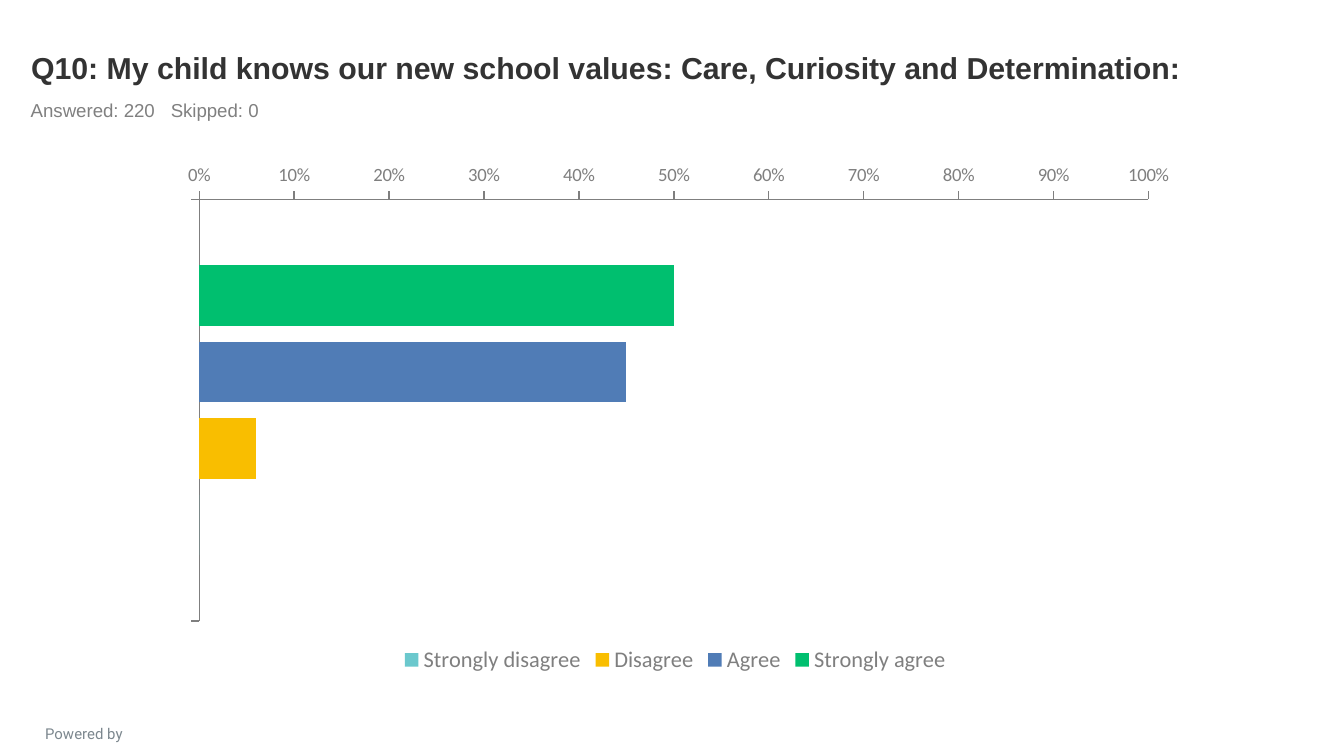
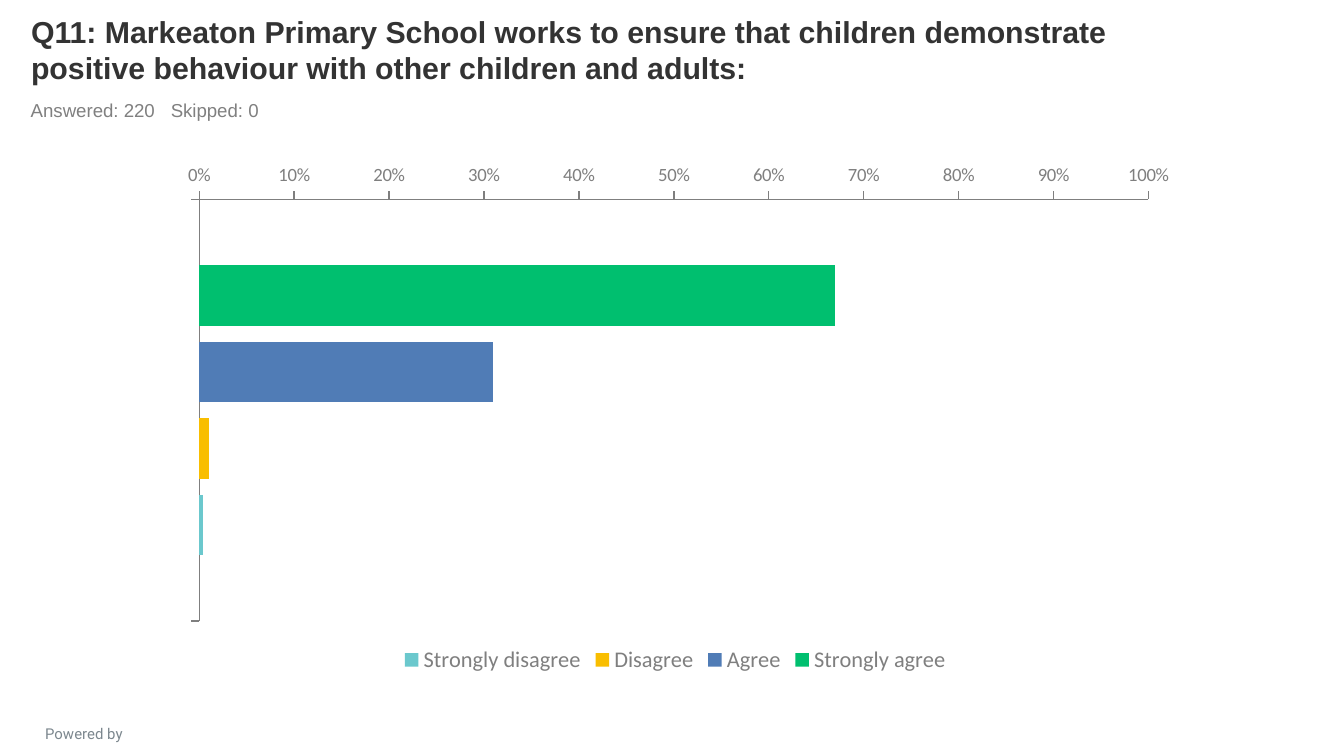
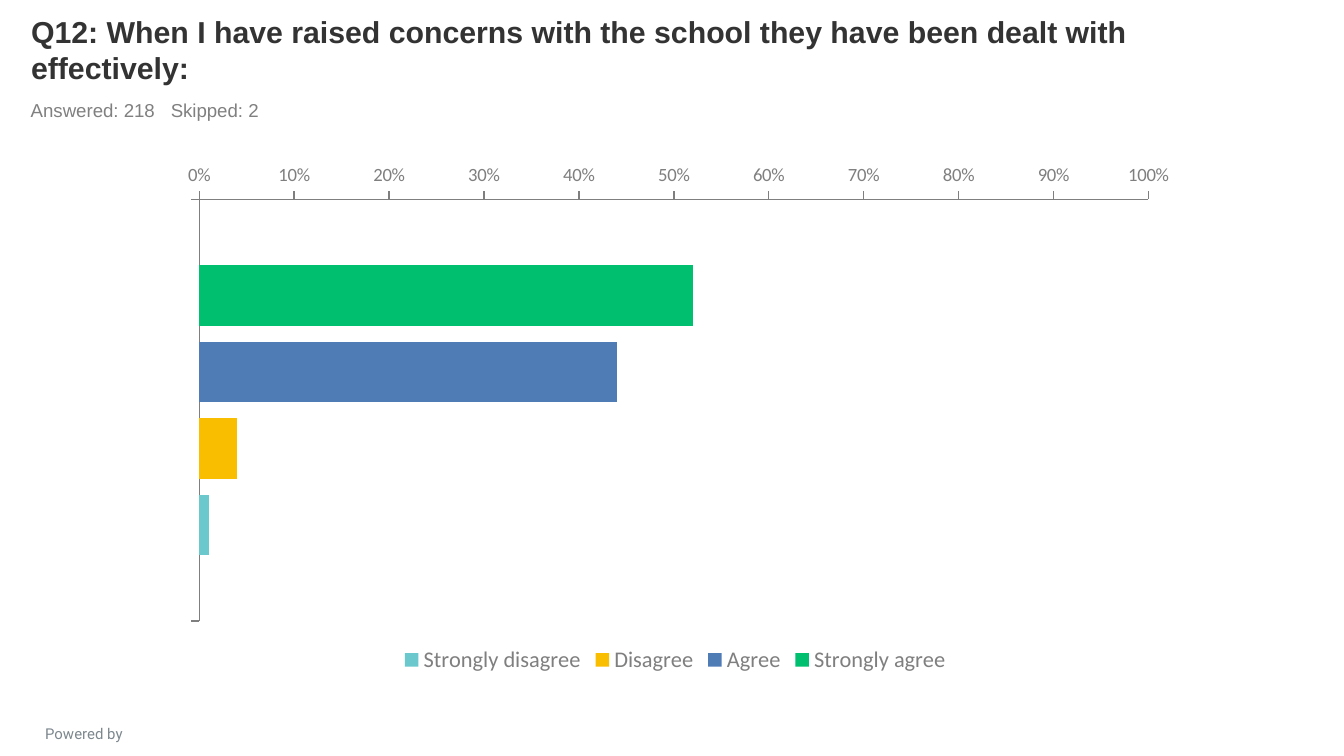
from pptx import Presentation
from pptx.chart.data import CategoryChartData
from pptx.dml.color import RGBColor
from pptx.enum.chart import (XL_AXIS_CROSSES, XL_CHART_TYPE, XL_LEGEND_POSITION,
                             XL_TICK_LABEL_POSITION, XL_TICK_MARK)
from pptx.enum.text import MSO_ANCHOR, MSO_AUTO_SIZE, PP_ALIGN
from pptx.oxml import parse_xml
from pptx.oxml.ns import nsdecls
from pptx.util import Pt

BAR_CLUSTERED = XL_CHART_TYPE.BAR_CLUSTERED
CROSS_AT_MAXIMUM = XL_AXIS_CROSSES.MAXIMUM
LEGEND_BOTTOM = XL_LEGEND_POSITION.BOTTOM
LABELS_LOW = XL_TICK_LABEL_POSITION.LOW
TICK_OUTSIDE, TICK_NONE = XL_TICK_MARK.OUTSIDE, XL_TICK_MARK.NONE
TOP, BOTTOM = MSO_ANCHOR.TOP, MSO_ANCHOR.BOTTOM
LEFT, CENTER = PP_ALIGN.LEFT, PP_ALIGN.CENTER
FIXED_SIZE = MSO_AUTO_SIZE.NONE

TITLE_ONLY = 5
AXIS_GREY = "7F7F7F"
ANSWER_COLOURS = {
    "Strongly agree": "00BF6F",
    "Agree": "507CB6",
    "Disagree": "F9BE00",
    "Strongly disagree": "6BC8CD",
}
SKIPPED_TAB = 75

# Question, answered, skipped, shares in the order of ANSWER_COLOURS
QUESTIONS = [
    ("Q10: My child knows our new school values: Care, Curiosity and Determination:",
     220, 0, (0.5, 0.45, 0.06, 0)),
    ("Q11: Markeaton Primary School works to ensure that children demonstrate "
     "positive behaviour with other children and adults:",
     220, 0, (0.67, 0.31, 0.01, 0.004)),
    ("Q12: When I have raised concerns with the school they have been dealt with "
     "effectively:",
     218, 2, (0.52, 0.44, 0.04, 0.01)),
]


def colour(hex_code):
    return RGBColor.from_string(hex_code)


def apply(target, values):
    for name, value in values.items():
        setattr(target, name, value)


def points(*lengths):
    return [Pt(length) for length in lengths]


class SurveyDeck:
    """Holds the shared style and the slide being built."""

    TITLE_FONT = {"name": "Arial", "size": Pt(16.2), "bold": True, "color": "333333"}
    COUNT_FONT = {"name": "Arial", "size": Pt(10), "color": "808080"}
    FOOTER_FONT = {"name": "Roboto", "size": Pt(8), "color": "7C878E"}
    CHART_FONT = {"name": "Calibri", "size": Pt(18), "color": "333333"}
    AXIS_FONT = {"size": Pt(10), "color": AXIS_GREY}
    LEGEND_FONT = {"size": Pt(12), "color": AXIS_GREY}

    def __init__(self):
        self.presentation = Presentation()
        apply(self.presentation, {"slide_width": Pt(720), "slide_height": Pt(405)})
        self.slide = None

    def new_slide(self):
        layout = self.presentation.slide_layouts[TITLE_ONLY]
        self.slide = self.presentation.slides.add_slide(layout)

    def style_font(self, font, style):
        apply(font, {name: value for name, value in style.items() if name != "color"})
        font.color.rgb = colour(style["color"])

    def fill_text(self, shape, text, style, anchor=TOP, align=LEFT, tab=None):
        frame = shape.text_frame
        apply(frame, {"word_wrap": True, "auto_size": FIXED_SIZE,
                      "vertical_anchor": anchor, "text": text})
        paragraph = frame.paragraphs[0]
        paragraph.alignment = align
        if tab:
            paragraph._p.get_or_add_pPr().append(parse_xml(
                f'<a:tabLst {nsdecls("a")}><a:tab pos="{Pt(tab)}" algn="l"/></a:tabLst>'))
        self.style_font(paragraph.font, style)

    def title(self, question):
        title = self.slide.shapes.title
        left, top, width, height = points(9.4, 6.5, 648, 43.2)
        apply(title, {"left": left, "top": top, "width": width, "height": height})
        self.fill_text(title, question, self.TITLE_FONT, anchor=BOTTOM)

    def response_counts(self, answered, skipped):
        box = self.slide.shapes.add_textbox(*points(9.4, 49.7, 648, 18.7))
        self.fill_text(box, f"Answered: {answered}\tSkipped: {skipped}",
                       self.COUNT_FONT, tab=SKIPPED_TAB)

    def footer(self):
        box = self.slide.shapes.add_textbox(*points(3.6, 384.5, 82.8, 13))
        self.fill_text(box, "Powered by", self.FOOTER_FONT, align=CENTER)

    def style_axis(self, axis, values):
        apply(axis, {"has_major_gridlines": False, "major_tick_mark": TICK_OUTSIDE,
                     "minor_tick_mark": TICK_NONE, **values})
        self.style_font(axis.tick_labels.font, self.AXIS_FONT)
        axis.format.line.width = Pt(0.75)
        axis.format.line.color.rgb = colour(AXIS_GREY)

    def answer_chart(self, shares):
        data = CategoryChartData(number_format="0%")
        data.categories = [" "]
        for answer, share in zip(ANSWER_COLOURS, shares):
            data.add_series(answer, [share])
        chart = self.slide.shapes.add_chart(
            BAR_CLUSTERED, *points(86.4, 82.8, 550.8, 280.8), data).chart
        apply(chart, {"has_title": False, "has_legend": True})
        self.style_font(chart.font, self.CHART_FONT)
        apply(chart.legend, {"position": LEGEND_BOTTOM, "include_in_layout": False})
        self.style_font(chart.legend.font, self.LEGEND_FONT)

        plot = chart.plots[0]
        apply(plot, {"gap_width": 219, "overlap": -27, "vary_by_categories": False})
        for series, hex_code in zip(plot.series, ANSWER_COLOURS.values()):
            series.invert_if_negative = False
            series.format.fill.solid()
            series.format.fill.fore_color.rgb = colour(hex_code)

        self.style_axis(chart.category_axis, {
            "reverse_order": True, "tick_label_position": LABELS_LOW,
            "crosses": CROSS_AT_MAXIMUM})
        self.style_axis(chart.value_axis, {
            "minimum_scale": 0, "maximum_scale": 1, "major_unit": 0.1})
        apply(chart.value_axis.tick_labels, {
            "number_format": "0%", "number_format_is_linked": False})


def main():
    deck = SurveyDeck()
    for question, answered, skipped, shares in QUESTIONS:
        deck.new_slide()
        deck.footer()
        deck.title(question)
        deck.response_counts(answered, skipped)
        deck.answer_chart(shares)
    deck.presentation.save("out.pptx")


if __name__ == "__main__":
    main()
